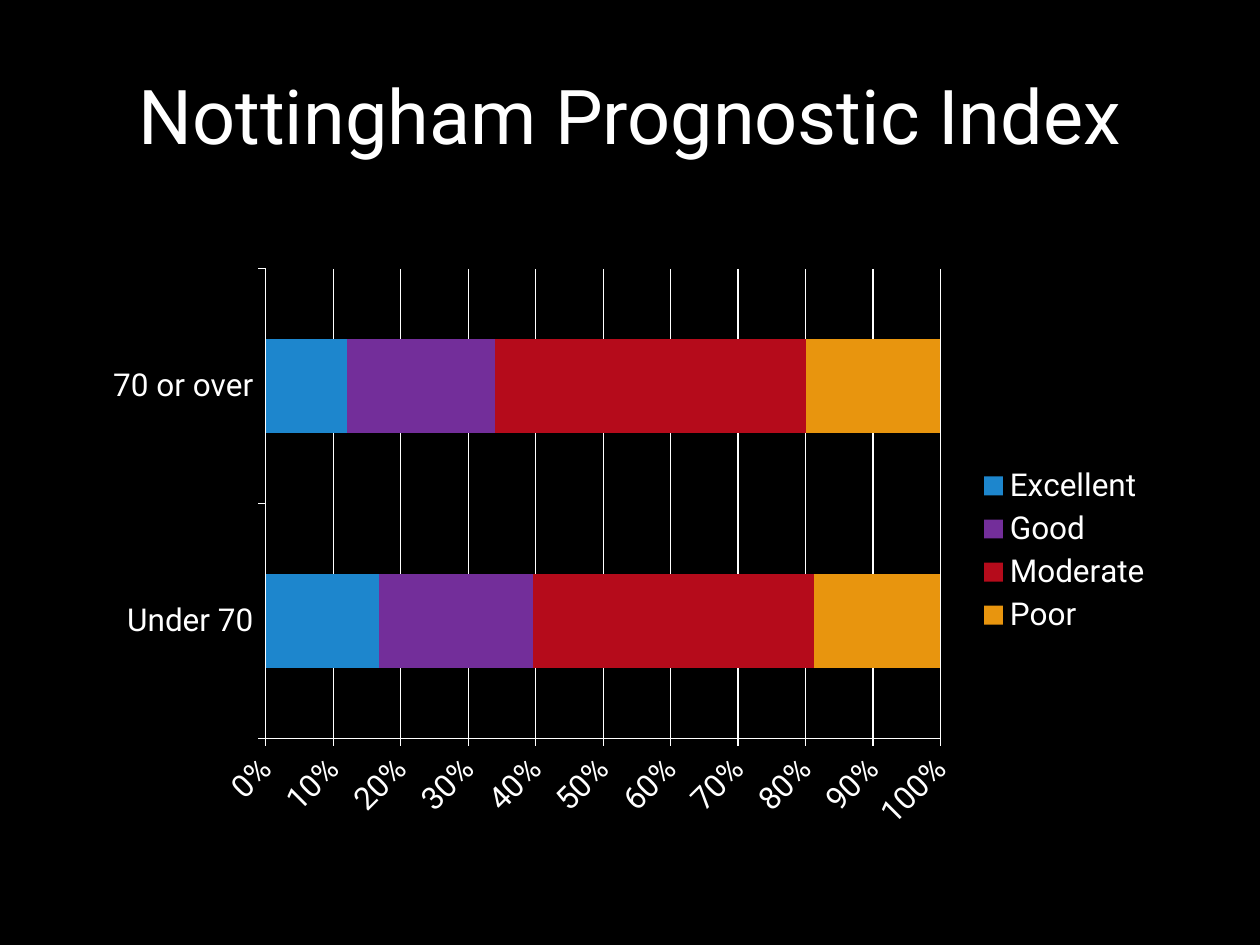
from lxml.etree import fromstring
from pptx import Presentation
from pptx.chart.data import CategoryChartData
from pptx.dml.color import RGBColor
from pptx.enum.chart import XL_CHART_TYPE, XL_LEGEND_POSITION, XL_TICK_MARK
from pptx.enum.text import MSO_ANCHOR, PP_ALIGN
from pptx.util import Inches, Pt

COLORS = {
    "bg": "000000",
    "text": "FFFFFF",
    "Excellent": "1D86CD",
    "Good": "732E9A",
    "Moderate": "B50B1B",
    "Poor": "E8950E",
}
FONT = "Roboto"
SHARES = {
    "Excellent": (17, 12),
    "Good": (23, 22),
    "Moderate": (42, 46),
    "Poor": (19, 20),
}


def put_text(tf, text, size=18, color="text", align=PP_ALIGN.CENTER, anchor=MSO_ANCHOR.MIDDLE):
    tf.word_wrap = True
    tf.vertical_anchor = anchor
    p = tf.paragraphs[0]
    p.alignment = align
    r = p.add_run()
    r.text = text
    r.font.name = FONT
    r.font.size = Pt(size)
    r.font.color.rgb = RGBColor.from_string(COLORS[color])


prs = Presentation()
prs.slide_width, prs.slide_height = W, H = Inches(10), Inches(7.5)
s = prs.slides.add_slide(prs.slide_layouts[5])
s.background.fill.solid()
s.background.fill.fore_color.rgb = RGBColor.from_string(COLORS["bg"])

left, width = int(W * 0.075), int(W * 0.85)
title = s.shapes.title
title.left, title.top, title.width, title.height = left, Inches(0.13), width, Inches(1.56)
put_text(title.text_frame, "Nottingham Prognostic Index", size=43.2)

data = CategoryChartData(number_format="General")
data.categories = ["Under 70", "70 or over"]
for name, values in SHARES.items():
    data.add_series(name, values)
chart = s.shapes.add_chart(
    XL_CHART_TYPE.BAR_STACKED_100, left, Inches(2.04), width, Inches(4.66), data
).chart
chart.has_title = False
chart.font.name = FONT
chart.font.size = Pt(18)
chart.font.color.rgb = RGBColor.from_string(COLORS["text"])
chart.has_legend = True
chart.legend.position = XL_LEGEND_POSITION.RIGHT
chart.legend.include_in_layout = False

plot = chart.plots[0]
plot.gap_width, plot.overlap, plot.vary_by_categories = 150, 100, False
for series in plot.series:
    series.format.fill.solid()
    series.format.fill.fore_color.rgb = RGBColor.from_string(COLORS[series.name])

value_axis = chart.value_axis
value_axis.minimum_scale, value_axis.maximum_scale, value_axis.major_unit = 0, 1, 0.1
value_axis.has_major_gridlines = True
value_axis.tick_labels.number_format = "0%"
value_axis.tick_labels.number_format_is_linked = False
for axis in (chart.category_axis, value_axis):
    axis.major_tick_mark = XL_TICK_MARK.OUTSIDE
    axis.minor_tick_mark = XL_TICK_MARK.NONE
for line in (chart.category_axis.format.line, value_axis.format.line, value_axis.major_gridlines.format.line):
    line.width = Pt(0.75)
    line.color.rgb = RGBColor.from_string(COLORS["text"])

value_axis.tick_labels.font.size = Pt(18)
value_axis.tick_labels.font.name = FONT
value_axis.tick_labels.font.color.rgb = RGBColor.from_string(COLORS["text"])
chart._chartSpace.xpath("//c:valAx/c:txPr/a:bodyPr")[0].set("rot", "-2700000")

area = chart._chartSpace.xpath("//c:plotArea")[0]
for old in area.xpath("c:layout"):
    area.remove(old)
area.insert(0, fromstring(
    '<c:layout xmlns:c="http://schemas.openxmlformats.org/drawingml/2006/chart"><c:manualLayout>'
    '<c:layoutTarget val="inner"/><c:xMode val="edge"/><c:yMode val="edge"/>'
    '<c:x val="0.16"/><c:y val="0.02"/><c:w val="0.63"/><c:h val="0.8"/>'
    '</c:manualLayout></c:layout>'
))

prs.save("out.pptx")
